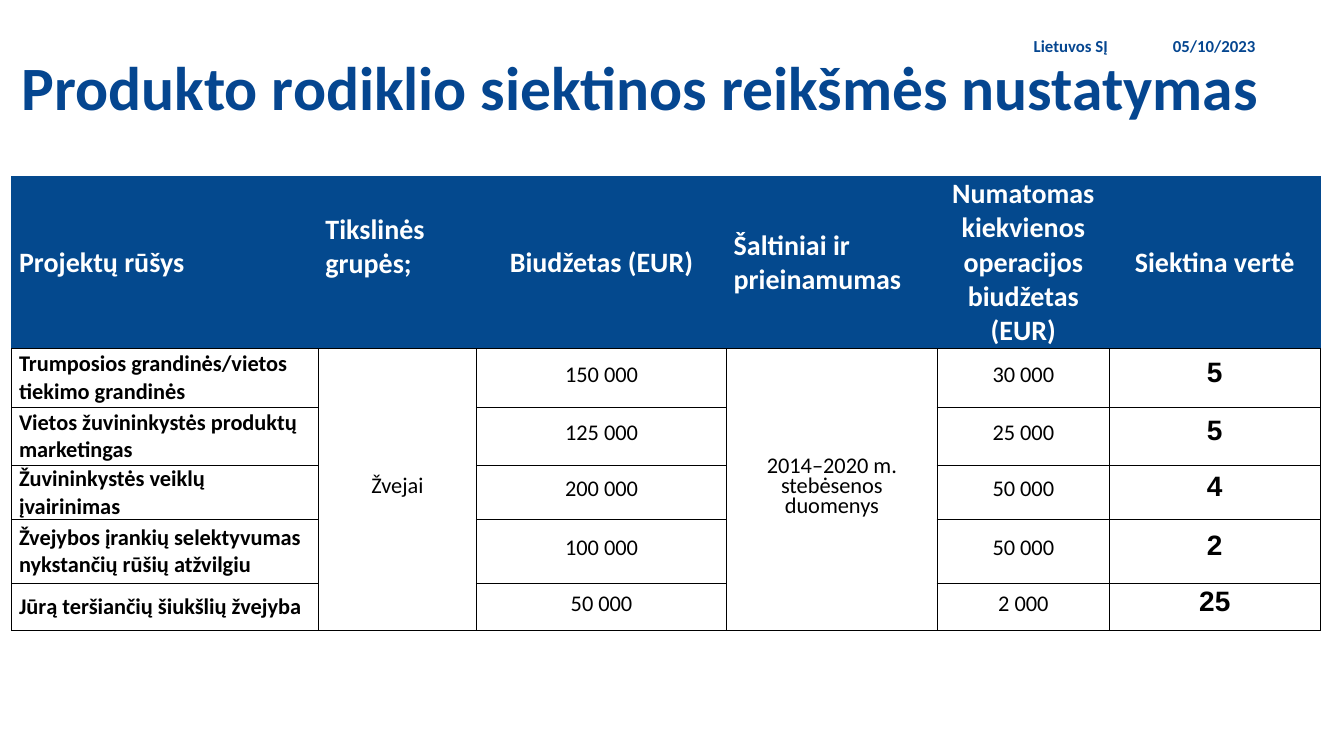
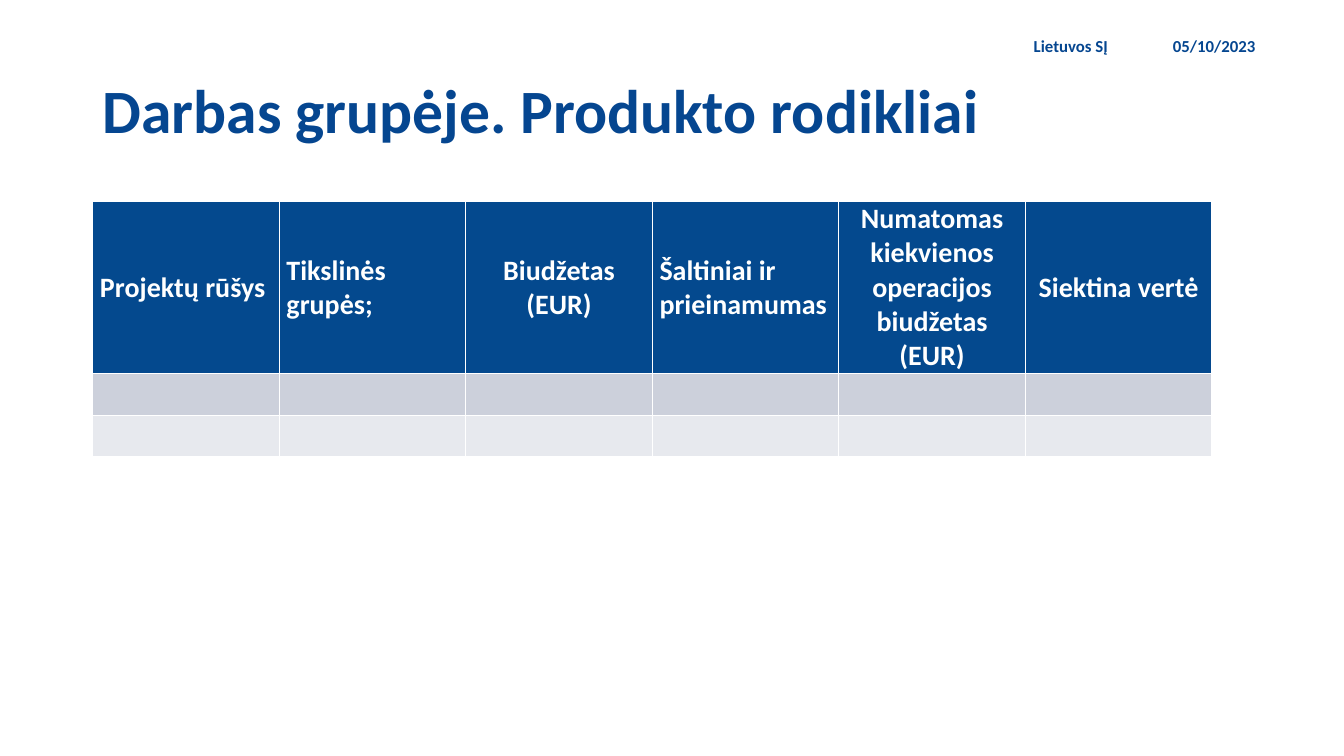
from dataclasses import dataclass

from lxml.etree import SubElement
from pptx import Presentation
from pptx.dml.color import RGBColor as RGB
from pptx.enum.text import MSO_ANCHOR as ANCHOR, PP_ALIGN as ALIGN
from pptx.oxml.ns import qn
from pptx.util import Cm, Pt


@dataclass(frozen=True)
class Theme:
    title_blue: str = "054690"
    header_blue: str = "04498E"
    white: str = "FFFFFF"
    black: str = "000000"
    band_dark: str = "CCD0DB"
    band_light: str = "E7E9EE"
    font: str = "Calibri"
    target_font: str = "Arial"
    title_size: int = 44
    header_size: int = 20
    target_size: int = 20
    body_size: int = 16
    meta_size: int = 12


theme = Theme()


def style_paragraph(paragraph, size, color, bold=True, align=ALIGN.LEFT, name=theme.font):
    paragraph.alignment = align
    font = paragraph.font
    font.name, font.size, font.bold = name, Pt(size), bold
    font.color.rgb = RGB.from_string(color)


def style_cell(cell, fill, edges):
    """Edges are the colours of the left, right, top and bottom borders."""
    properties = cell._tc.get_or_add_tcPr()
    for side, color in zip("LRTB", edges):
        line = SubElement(properties, qn(f"a:ln{side}"), w=str(Pt(1)))
        SubElement(SubElement(line, qn("a:solidFill")), qn("a:srgbClr"), val=color)
    if fill:
        cell.fill.solid()
        cell.fill.fore_color.rgb = RGB.from_string(fill)
    else:
        cell.fill.background()
    cell.margin_left = cell.margin_right = Cm(0.18)
    cell.margin_top = cell.margin_bottom = 0
    cell.vertical_anchor = ANCHOR.MIDDLE


# Content
headers = [
    ("Projektų rūšys", ALIGN.LEFT),
    ("Tikslinės grupės;", ALIGN.LEFT),
    ("Biudžetas (EUR)", ALIGN.CENTER),
    ("Šaltiniai ir prieinamumas", ALIGN.LEFT),
    ("Numatomas kiekvienos operacijos biudžetas (EUR)", ALIGN.CENTER),
    ("Siektina vertė", ALIGN.CENTER),
]
last_column = len(headers) - 1
projects = [
    ("Trumposios grandinės/vietos tiekimo grandinės", "Žvejai", "150 000",
     "2014–2020 m. stebėsenos duomenys", "30 000", "5"),
    ("Vietos žuvininkystės produktų marketingas", "", "125 000", "", "25 000", "5"),
    ("Žuvininkystės veiklų\vįvairinimas", "", "200 000", "", "50 000", "4"),
    ("Žvejybos įrankių selektyvumas nykstančių rūšių atžvilgiu", "", "100 000", "",
     "50 000", "2"),
    ("Jūrą teršiančių šiukšlių žvejyba", "", "50 000", "", "2 000", "25"),
]
header_height = 4.34
pages = [
    dict(title="Produkto rodiklio siektinos reikšmės nustatymas",
         title_box=(0.3, 1.02, 32.94, 2.54), corner=(0.3, 4.45),
         widths=[7.72, 3.99, 6.3, 5.31, 4.34, 5.31],
         heights=[1.47, 1.47, 1.37, 1.6, 1.19],
         rows=projects, bands=[None], grid=theme.black, header_edge=theme.header_blue,
         merged=[1, 3], raised=1),
    dict(title="Darbas grupėje. Produkto rodikliai",
         title_box=(2.34, 1.02, 29.21, 3.68), corner=(2.34, 5.08),
         widths=[4.7] * 6, heights=[1.04] * 2,
         rows=[[""] * 6] * 2, bands=[theme.band_dark, theme.band_light],
         grid=theme.white, header_edge=theme.white, merged=[], raised=None),
]

deck = Presentation()
deck.slide_width, deck.slide_height = Cm(33.87), Cm(19.05)

for page in pages:
    slide = deck.slides.add_slide(deck.slide_layouts[6])

    # Title, date and place
    for text, box, size, align in [
        (page["title"], page["title_box"], theme.title_size, ALIGN.LEFT),
        ("05/10/2023", (29.31, 0.86, 3.35, 0.61), theme.meta_size, ALIGN.LEFT),
        ("Lietuvos SĮ", (20.7, 0.86, 7.47, 0.61), theme.meta_size, ALIGN.RIGHT),
    ]:
        frame = slide.shapes.add_textbox(*map(Cm, box)).text_frame
        frame.word_wrap = True
        frame.vertical_anchor = ANCHOR.MIDDLE
        frame.text = text
        style_paragraph(frame.paragraphs[0], size, theme.title_blue, align=align)
        if size == theme.title_size:
            frame.paragraphs[0].line_spacing = 0.9

    # Table grid
    widths, heights = page["widths"], [header_height] + page["heights"]
    table = slide.shapes.add_table(
        len(heights), len(widths), *map(Cm, page["corner"]),
        Cm(sum(widths)), Cm(sum(heights))).table
    table.first_row = table.horz_banding = False
    for column, width in zip(table.columns, widths):
        column.width = Cm(width)
    for row, height in zip(table.rows, heights):
        row.height = Cm(height)

    # Header row
    edge, grid = page["header_edge"], page["grid"]
    for c, (text, align) in enumerate(headers):
        cell = table.cell(0, c)
        style_cell(cell, theme.header_blue, (edge, edge, edge, grid))
        cell.text = text
        style_paragraph(cell.text_frame.paragraphs[0], theme.header_size, theme.white,
                        align=align)
        if c == page["raised"]:
            cell.margin_bottom = Cm(0.8)

    # Project rows
    for r, values in enumerate(page["rows"], start=1):
        band = page["bands"][(r - 1) % len(page["bands"])]
        for c, text in enumerate(values):
            cell = table.cell(r, c)
            style_cell(cell, band, [grid] * 4)
            if not text:
                continue
            cell.text = text
            paragraph = cell.text_frame.paragraphs[0]
            if c == 0:
                style_paragraph(paragraph, theme.body_size, theme.black)
                continue
            if c == last_column:
                style_paragraph(paragraph, theme.target_size, theme.black,
                                align=ALIGN.CENTER, name=theme.target_font)
            else:
                style_paragraph(paragraph, theme.body_size, theme.black, bold=False,
                                align=ALIGN.CENTER)
            paragraph.line_spacing = Pt(14.4)

    # Cells shared by all projects
    for c in page["merged"]:
        table.cell(1, c).merge(table.cell(len(page["rows"]), c))

deck.save("out.pptx")
